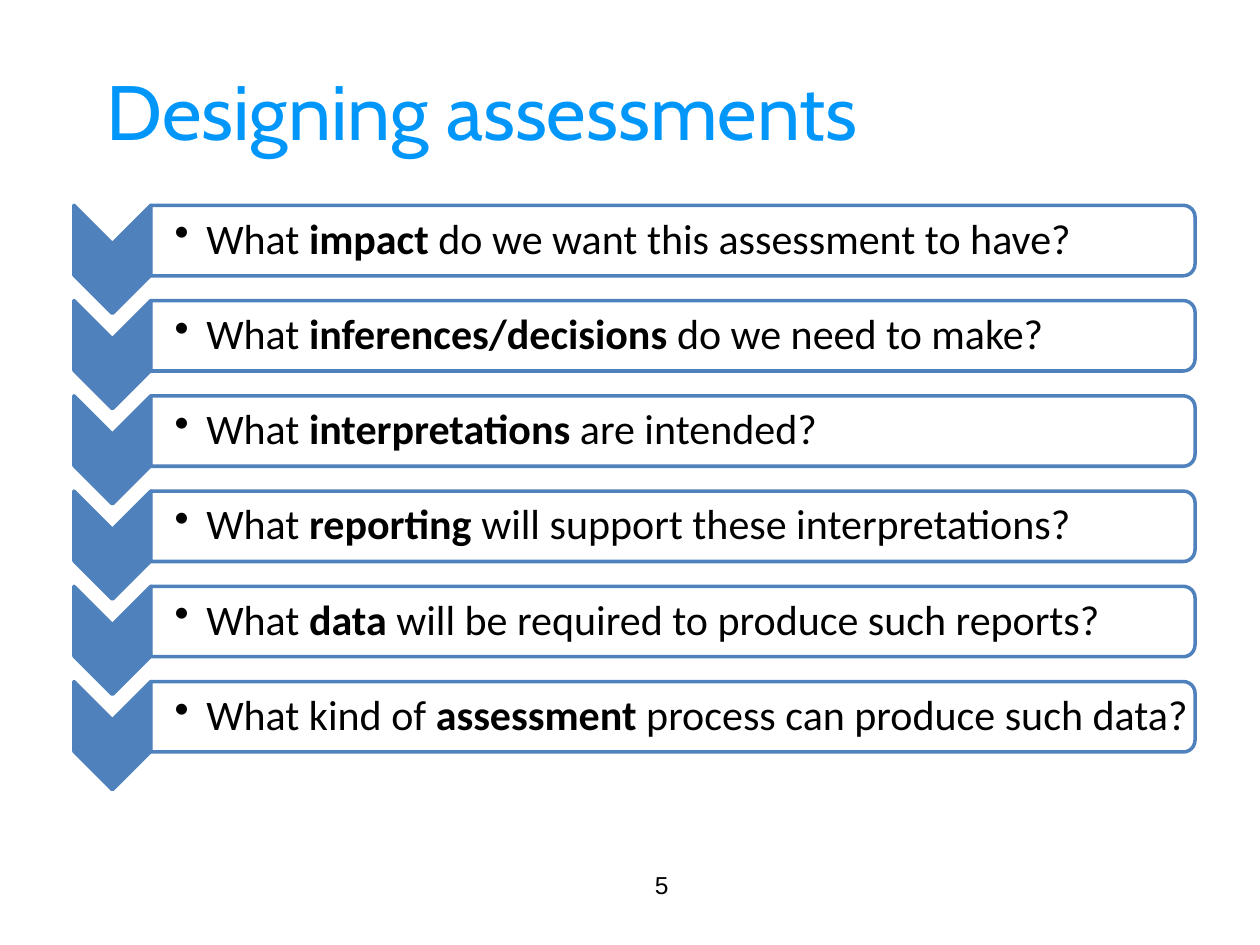
from dataclasses import dataclass

from lxml.etree import SubElement as Sub
from pptx import Presentation
from pptx.dml.color import RGBColor as Rgb
from pptx.enum.shapes import MSO_SHAPE as Kind
from pptx.enum.text import MSO_ANCHOR as Anchor, PP_ALIGN as Align
from pptx.oxml.ns import qn
from pptx.util import Cm, Pt


@dataclass(frozen=True)
class Theme:
    title: Rgb = Rgb(0x00, 0x96, 0xFA)
    blue: Rgb = Rgb(0x4F, 0x81, 0xBD)
    white: Rgb = Rgb(0xFF, 0xFF, 0xFF)
    ink: Rgb = Rgb(0x00, 0x00, 0x00)
    head: int = 44
    body: int = 24
    foot: int = 14
    edge: int = 2


THEME = Theme()

# Each question: words before, bold key word, words after
ROWS = [
    ("What ", "impact", " do we want this assessment to have?"),
    ("What ", "inferences/decisions", " do we need to make?"),
    ("What ", "interpretations", " are intended?"),
    ("What ", "reporting", " will support these interpretations?"),
    ("What ", "data", " will be required to produce such reports?"),
    ("What kind of ", "assessment", " process can produce such data?"),
]


def style(font, name, size, color):
    font.name = name
    font.size = Pt(size)
    font.color.rgb = color


def add_text(shapes, x, y, w, h):
    frame = shapes.add_textbox(Cm(x), Cm(y), Cm(w), Cm(h)).text_frame
    frame.word_wrap = True
    return frame


def add_turned(shapes, kind, x, y, w, h, fill):
    """Add a shape turned by 90 degrees that fills the given box."""
    left, top = x + (w - h) / 2, y + (h - w) / 2
    shape = shapes.add_shape(kind, Cm(left), Cm(top), Cm(h), Cm(w))
    shape.rotation = 90
    shape.shadow.inherit = False
    shape.fill.solid()
    shape.fill.fore_color.rgb = fill
    shape.line.color.rgb = THEME.blue
    shape.line.width = Pt(THEME.edge)
    return shape


def add_title(slide, x, y, w, h):
    frame = add_text(slide.shapes, x, y, w, h)
    frame.vertical_anchor = Anchor.MIDDLE
    frame.text = "Designing assessments"
    style(frame.paragraphs[0].runs[0].font, "Cabin", THEME.head, THEME.title)


def add_row(shapes, parts, x, y, w):
    wide, tall, high = 1.55, 2.18, 1.42

    # Chevron and rounded bar
    add_turned(shapes, Kind.CHEVRON, x, y, wide, tall, THEME.blue)
    bar = add_turned(shapes, Kind.ROUND_2_SAME_RECTANGLE,
                     x + wide, y, w - wide, high, THEME.white)
    tint = bar.fill._xPr.find(qn("a:solidFill"))[0]
    Sub(tint, qn("a:alpha"), val="90000")

    # Question
    frame = add_text(shapes, x + wide, y + 0.06, w - wide - 0.05, high - 0.12)
    frame.vertical_anchor = Anchor.MIDDLE
    frame.margin_left = Cm(0.48)
    frame.margin_right = frame.margin_top = frame.margin_bottom = Cm(0.05)
    para = frame.paragraphs[0]
    para.level = 1
    para.line_spacing = 0.9
    para.space_after = Pt(0.15 * THEME.body)
    props = para._p.get_or_add_pPr()
    props.set("marL", str(Cm(0.64)))
    props.set("indent", str(Cm(-0.64)))
    Sub(props, qn("a:buChar"), char="•")
    for i, part in enumerate(parts):
        run = para.add_run()
        run.text = part
        style(run.font, "Calibri", THEME.body, THEME.ink)
        run.font.bold = i == 1


def add_list(slide, x, y, w, pitch):
    group = slide.shapes.add_group_shape()
    for i, parts in enumerate(ROWS):
        add_row(group.shapes, parts, x, y + i * pitch, w)


def add_number(slide, x, y, w, h):
    frame = add_text(slide.shapes, x, y, w, h)
    frame.text = "5"
    para = frame.paragraphs[0]
    para.alignment = Align.CENTER
    style(para.runs[0].font, "Arial", THEME.foot, THEME.ink)


def main():
    deck = Presentation()
    deck.slide_width, deck.slide_height = Cm(25.4), Cm(19.05)
    slide = deck.slides.add_slide(deck.slide_layouts[6])
    add_title(slide, 1.9, 1.12, 21.6, 2.2)
    add_number(slide, 10.7, 17.42, 5.28, 1.2)
    add_list(slide, 1.49, 4.14, 22.6, 1.92)
    deck.save("out.pptx")


if __name__ == "__main__":
    main()
